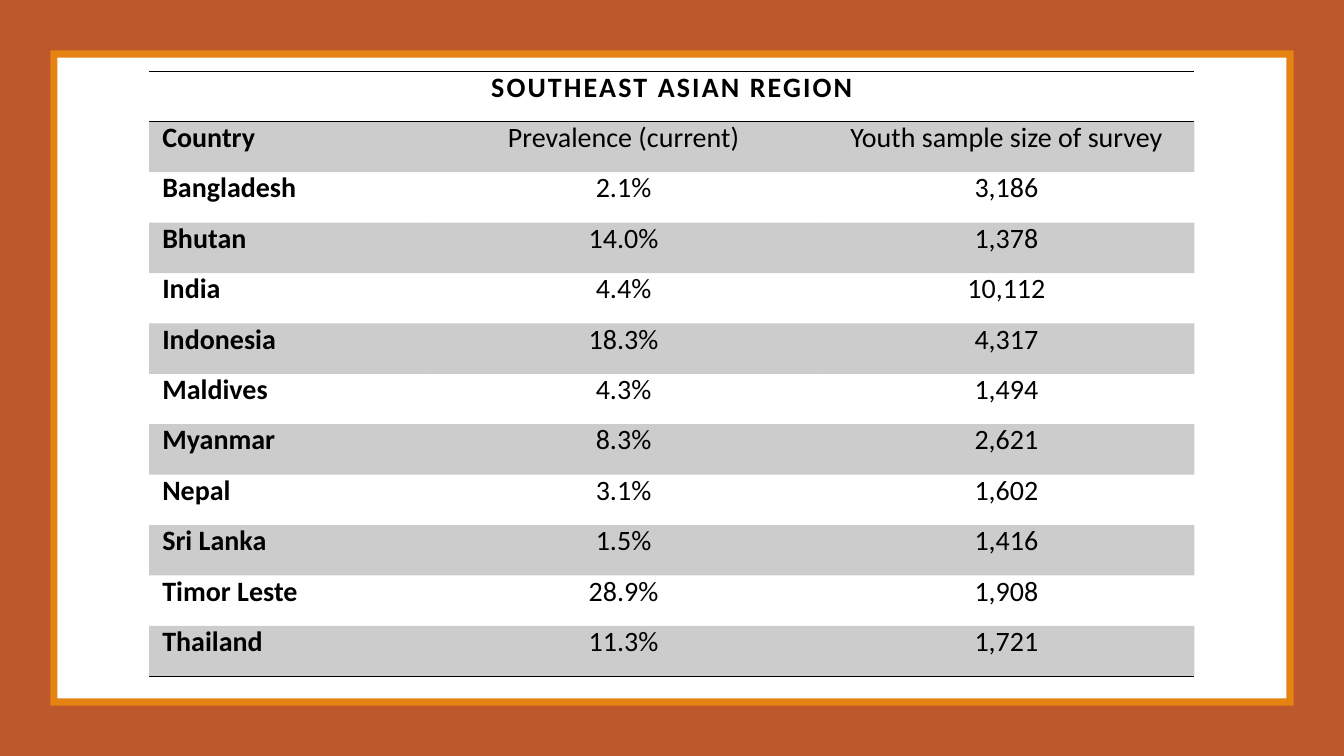
import pptx
import pptx.util
import pptx.dml.color
import pptx.enum.shapes
import pptx.enum.text
import pptx.oxml
import pptx.oxml.ns
from pptx.util import Cm

ORANGE, AMBER, WHITE, BLACK = "BD582C", "E48312", "FFFFFF", "000000"
PAGE_WIDTH, PAGE_HEIGHT = 33.87, 19.05
ROW_HEIGHT = 1.27
COLUMN_WIDTHS = [7.04, 9.83, 9.47]
NO_GRID_STYLE = "{2D5ABB26-0587-4C30-8999-92F81FD0307C}"

TITLE = "SOUTHEAST ASIAN REGION"
ROWS = [
    ("Country", "Prevalence (current)", "Youth sample size of survey"),
    ("Bangladesh", "2.1%", "3,186"),
    ("Bhutan", "14.0%", "1,378"),
    ("India", "4.4%", "10,112"),
    ("Indonesia", "18.3%", "4,317"),
    ("Maldives", "4.3%", "1,494"),
    ("Myanmar", "8.3%", "2,621"),
    ("Nepal", "3.1%", "1,602"),
    ("Sri Lanka", "1.5%", "1,416"),
    ("Timor Leste", "28.9%", "1,908"),
    ("Thailand", "11.3%", "1,721"),
]


def color(value):
    return pptx.dml.color.RGBColor.from_string(value)


def add_frame(page, width, height):
    """Nested rectangles: outer border, thin rim and white panel."""
    for inset, fill in ((0, ORANGE), (1.27, AMBER), (1.45, WHITE)):
        box = page.shapes.add_shape(
            pptx.enum.shapes.MSO_SHAPE.RECTANGLE, Cm(inset), Cm(inset),
            Cm(width - 2 * inset), Cm(height - 2 * inset))
        box.shadow.inherit = False
        box.fill.solid()
        box.fill.fore_color.rgb = color(fill)
        box.line.fill.background()


def write_cell(cell, text, bold, centered, spacing=0):
    cell.margin_left = cell.margin_right = Cm(0.33)
    cell.margin_top = cell.margin_bottom = Cm(0.33)
    para = cell.text_frame.paragraphs[0]
    align = pptx.enum.text.PP_ALIGN
    para.alignment = align.CENTER if centered else align.LEFT
    para.line_spacing = pptx.util.Pt(14.4)
    span = para.add_run()
    span.text = text
    span.font.name = "Calibri"
    span.font.size = pptx.util.Pt(20)
    span.font.bold = bold
    span.font.color.rgb = color(BLACK)
    if spacing:
        span._r.get_or_add_rPr().set("spc", str(int(spacing * 100)))


def shade_cell(cell, shaded):
    if not shaded:
        cell.fill.background()
        return
    cell.fill.solid()
    cell.fill.fore_color.rgb = color(BLACK)
    tint = cell._tc.tcPr.find(".//" + pptx.oxml.ns.qn("a:srgbClr"))
    tint.append(pptx.oxml.parse_xml(
        f'<a:alpha {pptx.oxml.ns.nsdecls("a")} val="20000"/>'))


def rule_cell(cell, sides):
    """Draw 1 pt lines; they must precede the fill in the cell properties."""
    properties = cell._tc.get_or_add_tcPr()
    for position, side in enumerate(sides):
        properties.insert(position, pptx.oxml.parse_xml(
            f'<a:ln{side} {pptx.oxml.ns.nsdecls("a")} w="12700"><a:solidFill>'
            f'<a:srgbClr val="{BLACK}"/></a:solidFill></a:ln{side}>'))


def add_survey_table(page, left, top):
    row_count = len(ROWS) + 1
    frame = page.shapes.add_table(
        row_count, len(COLUMN_WIDTHS), Cm(left), Cm(top),
        Cm(sum(COLUMN_WIDTHS)), Cm(row_count * ROW_HEIGHT))
    table = frame.table
    table.first_row = table.horz_banding = False
    style = frame.element.find(".//" + pptx.oxml.ns.qn("a:tableStyleId"))
    style.text = NO_GRID_STYLE
    for column, width in zip(table.columns, COLUMN_WIDTHS):
        column.width = Cm(width)
    for row in table.rows:
        row.height = Cm(ROW_HEIGHT)

    # Title row across all columns
    heading = table.cell(0, 0)
    heading.merge(table.cell(0, len(COLUMN_WIDTHS) - 1))
    write_cell(heading, TITLE, True, True, spacing=1.5)
    for cell in table.rows[0].cells:
        shade_cell(cell, False)
        rule_cell(cell, "TB")

    # Column labels and countries, every other row shaded
    for number, values in enumerate(ROWS, start=1):
        for index, text in enumerate(values):
            cell = table.cell(number, index)
            write_cell(cell, text, index == 0, index > 0)
            shade_cell(cell, number % 2 == 1)
            if number == len(ROWS):
                rule_cell(cell, "B")


def main():
    deck = pptx.Presentation()
    deck.slide_width, deck.slide_height = Cm(PAGE_WIDTH), Cm(PAGE_HEIGHT)
    page = deck.slides.add_slide(deck.slide_layouts[6])
    add_frame(page, PAGE_WIDTH, PAGE_HEIGHT)
    add_survey_table(page, 3.76, 1.8)
    deck.save("out.pptx")


if __name__ == "__main__":
    main()
